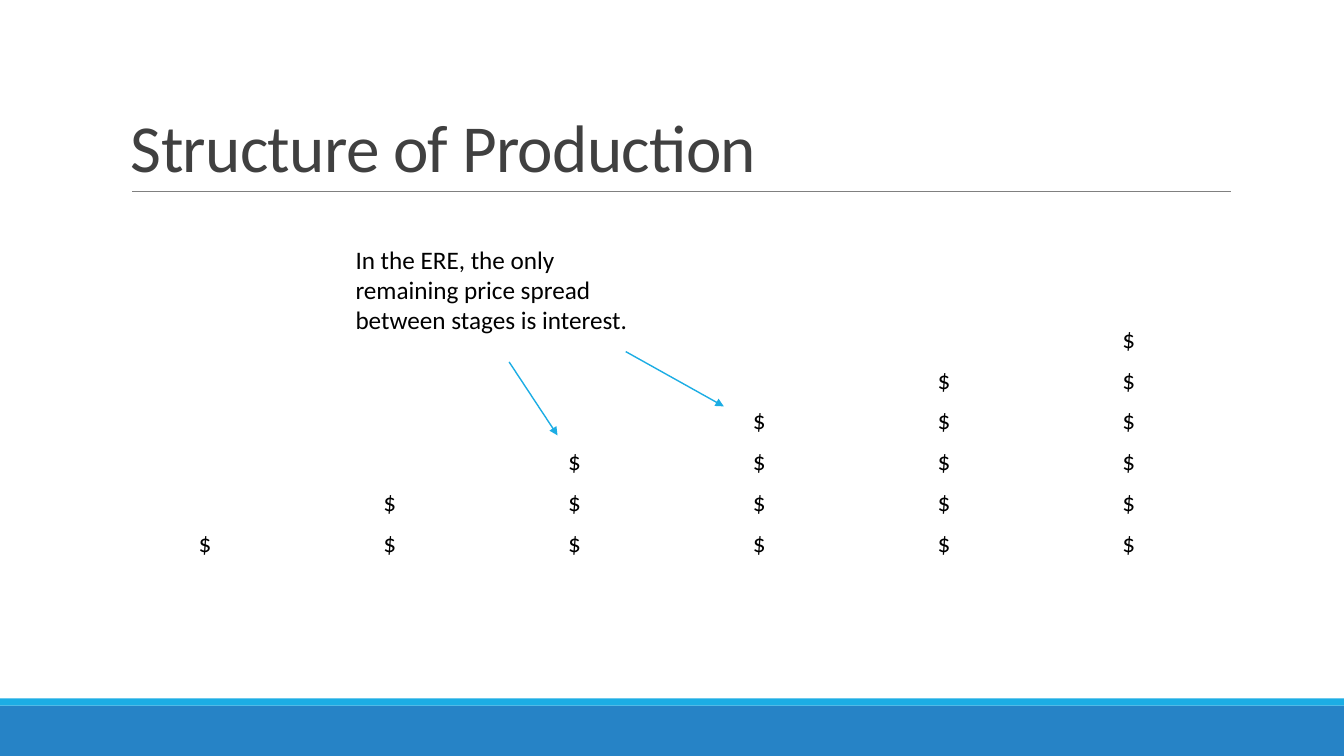
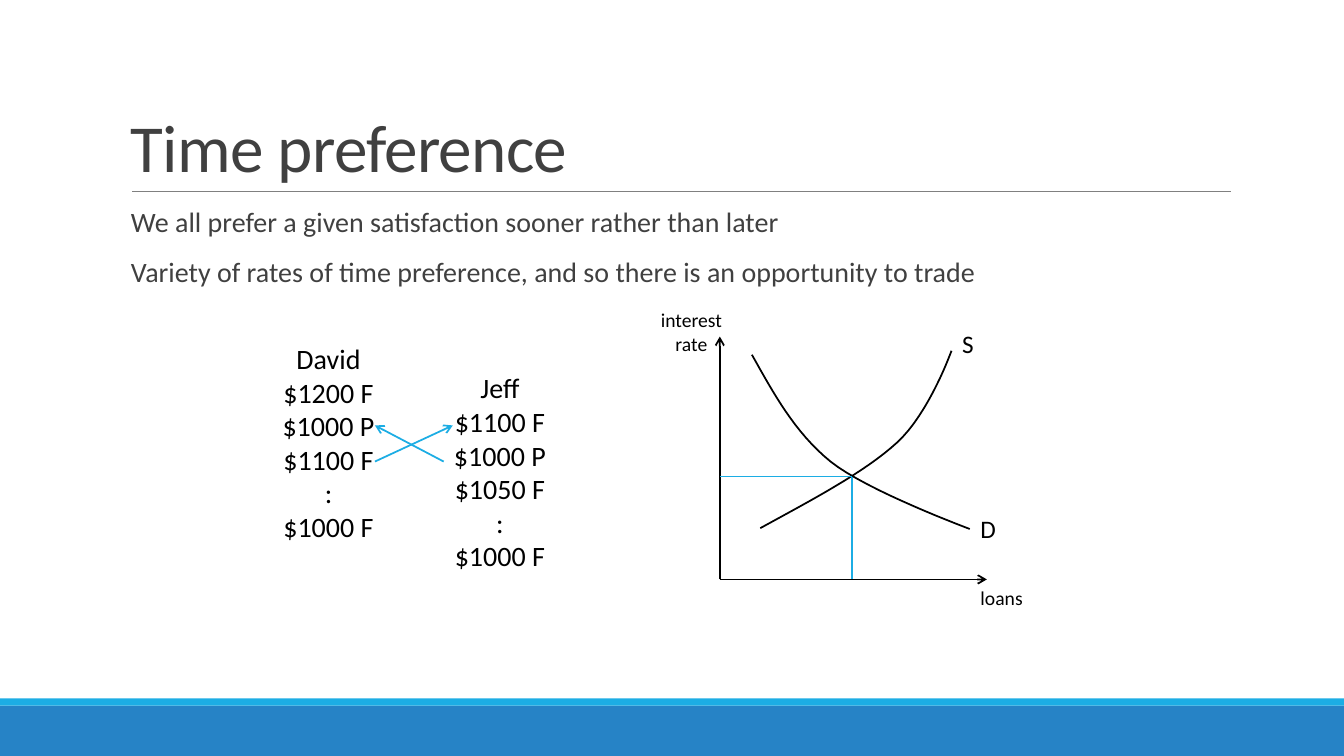
from lxml import etree
from pptx import Presentation
from pptx.dml.color import RGBColor
from pptx.enum.shapes import MSO_CONNECTOR, MSO_SHAPE
from pptx.enum.text import MSO_ANCHOR, MSO_AUTO_SIZE, PP_ALIGN
from pptx.oxml.ns import qn
from pptx.util import Cm, Pt

LINE = MSO_CONNECTOR.STRAIGHT
RECT = MSO_SHAPE.RECTANGLE
LOW = MSO_ANCHOR.BOTTOM
GROW = MSO_AUTO_SIZE.SHAPE_TO_FIT_TEXT
LEFT, MID = PP_ALIGN.LEFT, PP_ALIGN.CENTER

HUES = {"band": "2683C6", "sky": "1CADE4", "rule": "808080",
        "head": "404040", "ink": "000000", "page": "FFFFFF"}
FONT = "Calibri"
WIDE, HIGH = 33.87, 19.05


def hue(name):
    return RGBColor.from_string(HUES[name])


def style(para, size, tint):
    para.font.name = FONT
    para.font.size = Pt(size)
    para.font.color.rgb = hue(tint)


def text(slide, box, lines, size, tint="ink", align=LEFT, wrap=False):
    shape = slide.shapes.add_textbox(*map(Cm, box))
    frame = shape.text_frame
    frame.word_wrap = wrap
    frame.text = "\n".join(lines)
    for para in frame.paragraphs:
        style(para, size, tint)
        para.alignment = align
    return frame


def label(slide, box, lines, size, align=LEFT, wrap=False):
    text(slide, box, lines, size, align=align, wrap=wrap).auto_size = GROW


def line(slide, start, end, tint, width=1.25, tip=None):
    link = slide.shapes.add_connector(LINE, *map(Cm, start + end))
    link.line.color.rgb = hue(tint)
    link.line.width = Pt(width)
    if tip:
        etree.SubElement(link.line._get_or_add_ln(), qn("a:tailEnd"), type=tip)
    etree.SubElement(link._element.spPr, qn("a:effectLst"))


def band(slide, top, height, tint):
    bar = slide.shapes.add_shape(RECT, 0, Cm(top), Cm(WIDE), Cm(height))
    bar.shadow.inherit = False
    bar.fill.solid()
    bar.fill.fore_color.rgb = hue(tint)
    bar.line.fill.background()


def base(deck, title):
    slide = deck.slides.add_slide(deck.slide_layouts[6])
    band(slide, 17.78, 1.27, "band")
    band(slide, 17.6, 0.18, "sky")
    line(slide, (3.33, 4.82), (31.01, 4.82), "rule", 0.5)
    frame = text(slide, (3.05, 0.79, 27.94, 4.04), [title], 48, "head", wrap=True)
    frame.vertical_anchor = LOW
    para = frame.paragraphs[0]
    para.line_spacing = 0.85
    para.runs[0]._r.get_or_add_rPr().set("spc", "-50")
    return slide


def stairs(slide, x, y, w, h, rows=8, cols=6):
    grid = slide.shapes.add_table(rows, cols, *map(Cm, (x, y, w, h))).table
    grid.first_row = grid.horz_banding = False
    for row in range(rows):
        for col in range(cols):
            cell = grid.cell(row, col)
            cell.fill.solid()
            cell.fill.fore_color.rgb = hue("page")
            if row + col >= rows - 1:
                cell.text = "$"
            style(cell.text_frame.paragraphs[0], 18, "ink")
    label(slide, (x + 3.96, y + 0.03, 7.52, 2.57),
          ["In the ERE, the only remaining price spread between stages is interest."],
          18, wrap=True)
    for a, b, c, d in ((8.08, 3.13, 9.3, 4.98), (11.02, 2.87, 13.49, 4.25)):
        line(slide, (x + a, y + b), (x + c, y + d), "sky", 1, "triangle")


def points(slide, box, lines):
    frame = text(slide, box, lines, 20, "head", wrap=True)
    for para in frame.paragraphs:
        para.line_spacing = 0.9
        para.space_before = Pt(12)
        para.space_after = Pt(2)


def trade(slide, x, y):
    ranks = (
        (0, 0, ["David", "$1200 F", "$1000 P", "$1100 F", ":", "$1000 F"]),
        (4.32, 0.74, ["Jeff", "$1100 F", "$1000 P", "$1050 F", ":", "$1000 F"]),
    )
    for left, top, lines in ranks:
        label(slide, (x + left, y + top, 2.84, 5.38), lines, 20, MID)
    for start, end in ((2.59, 4.55), (4.32, 2.59)):
        line(slide, (x + start, y + 3.15), (x + end, y + 2.24), "sky", tip="arrow")


def bezier(a, b, c, d, steps=16):
    for step in range(1, steps + 1):
        t = step / steps
        s = 1 - t
        yield tuple(s**3 * i + 3 * s * s * t * j + 3 * s * t * t * k + t**3 * m
                    for i, j, k, m in zip(a, b, c, d))


def curve(slide, x, y, knots):
    spots = [knots[0]]
    for i in range(0, len(knots) - 1, 3):
        spots.extend(bezier(*knots[i:i + 4]))
    spots = [(Cm(x + a), Cm(y + b)) for a, b in spots]
    pen = slide.shapes.build_freeform(*spots[0])
    pen.add_line_segments(spots[1:], close=False)
    shape = pen.convert_to_shape()
    shape.shadow.inherit = False
    shape.fill.background()
    shape.line.color.rgb = hue("ink")
    shape.line.width = Pt(1.25)


def market(slide, x, y, w, h):
    root = (x, y + h)
    for end in ((x, y), (x + w, y + h)):
        line(slide, root, end, "ink", tip="arrow")
    demand = [(0.81, 0.46), (1.35, 1.42), (1.88, 2.41), (2.79, 3.15),
              (3.71, 3.89), (6.3, 4.85), (6.3, 4.85)]
    supply = [(1.02, 4.83), (2.34, 4.11), (3.68, 3.4), (4.47, 2.67),
              (5.28, 1.93), (5.84, 0.36), (5.84, 0.36)]
    for knots in (demand, supply):
        curve(slide, x, y, knots)
    meet = (x + 3.33, y + 3.53)
    for end in ((x, meet[1]), (meet[0], y + h)):
        line(slide, meet, end, "sky")
    label(slide, (x - 1.78, y - 0.84, 2.13, 1.45), ["interest", "rate"], 14, MID)
    label(slide, (x + 6.32, y + h + 0.03, 1.6, 0.86), ["loans"], 14)
    label(slide, (x + 5.86, y - 0.33, 0.81, 1.02), ["S"], 18)
    label(slide, (x + 6.32, y + 4.32, 0.94, 1.02), ["D"], 18)


def main():
    deck = Presentation()
    deck.slide_width, deck.slide_height = Cm(WIDE), Cm(HIGH)
    stairs(base(deck, "Structure of Production"), 4.75, 5.99, 27.94, 8.23)
    slide = base(deck, "Time preference")
    points(slide, (3.05, 5.13, 27.94, 11.18), [
        "We all prefer a given satisfaction sooner rather than later",
        "Variety of rates of time preference, and so there is an opportunity to trade",
    ])
    trade(slide, 6.86, 8.48)
    market(slide, 18.14, 8.48, 6.73, 6.12)
    deck.save("out.pptx")


if __name__ == "__main__":
    main()
